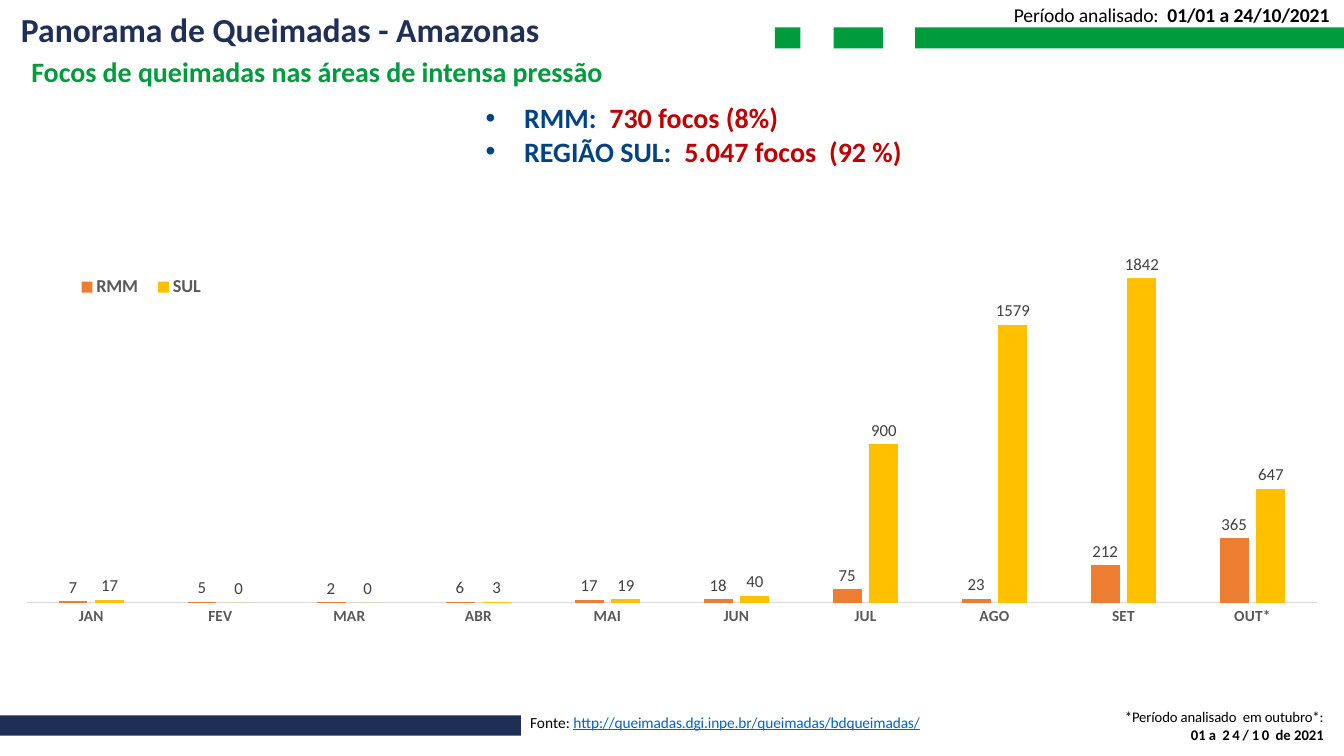
from dataclasses import dataclass

from lxml import etree
from pptx import Presentation
from pptx import util as u
from pptx.chart.data import CategoryChartData
from pptx.dml.color import RGBColor
from pptx.enum import chart as charts
from pptx.enum import shapes, text
from pptx.oxml import ns


@dataclass(frozen=True)
class Theme:
    font: str = "Calibri"
    green: str = "009B3C"
    navy: str = "1F2E57"
    title_navy: str = "202F58"
    blue: str = "004385"
    red: str = "C00000"
    black: str = "000000"
    link: str = "0563C1"
    rmm: str = "ED7D31"
    sul: str = "FFC000"
    axis_text: str = "595959"
    axis_line: str = "D9D9D9"
    label_text: str = "404040"
    title: float = 24
    heading: float = 20
    period: float = 14
    legend: float = 13
    label: float = 12
    axis: float = 11
    source: float = 11
    footnote: float = 10.5


THEME = Theme()
MONTHS = ["JAN", "FEV", "MAR", "ABR", "MAI", "JUN", "JUL", "AGO", "SET", "OUT*"]
HOTSPOTS = {
    "RMM": (THEME.rmm, [7, 5, 2, 6, 17, 18, 75, 23, 212, 365]),
    "SUL": (THEME.sul, [17, 0, 0, 3, 19, 40, 900, 1579, 1842, 647]),
}


def cm_box(*lengths):
    return [u.Cm(length) for length in lengths]


def set_font(font, size, color, **formats):
    values = {"name": THEME.font, "size": u.Pt(size), **formats}
    for name, value in values.items():
        setattr(font, name, value)
    font.color.rgb = RGBColor.from_string(color)


def add_bar(page, color, *box):
    bar = page.shapes.add_shape(shapes.MSO_SHAPE.RECTANGLE, *cm_box(*box))
    bar.shadow.inherit = False
    bar.fill.solid()
    bar.fill.fore_color.rgb = RGBColor.from_string(color)
    bar.line.fill.background()


def add_text_frame(page, box, **formats):
    frame = page.shapes.add_textbox(*cm_box(*box)).text_frame
    values = {"word_wrap": True, "margin_left": 0, "margin_right": 0,
              "margin_top": u.Cm(0.03), "margin_bottom": 0, **formats}
    for name, value in values.items():
        setattr(frame, name, value)
    return frame


def fill_para(para, size, spans, **formats):
    """Add spans of (text, color, bold, letter spacing in points)."""
    for name, value in formats.items():
        setattr(para, name, value)
    for words, color, bold, spacing in spans:
        span = para.add_run()
        span.text = words
        set_font(span.font, size, color, bold=bold)
        span.font.underline = color == THEME.link
        span.font._element.set("spc", str(round(spacing * 100)))


def set_bullet(para):
    props = para._p.get_or_add_pPr()
    props.set("marL", str(u.Cm(12.42)))
    props.set("indent", str(u.Cm(-0.97)))
    etree.SubElement(props, ns.qn("a:buFont"), typeface="Arial")
    etree.SubElement(props, ns.qn("a:buChar"), char="•")


def set_layout(part, following, inner=False, **fractions):
    """Place a chart part, as fractions of the chart, before the tags named."""
    for old in part.findall(ns.qn("c:layout")):
        part.remove(old)
    layout = etree.Element(ns.qn("c:layout"))
    manual = etree.SubElement(layout, ns.qn("c:manualLayout"))
    if inner:
        etree.SubElement(manual, ns.qn("c:layoutTarget"), val="inner")
    for name in ("xMode", "yMode"):
        etree.SubElement(manual, ns.qn(f"c:{name}"), val="edge")
    for name, value in fractions.items():
        etree.SubElement(manual, ns.qn(f"c:{name}"), val=str(value))
    tags = [ns.qn(tag) for tag in following]
    next(child for child in part if child.tag in tags).addprevious(layout)


def add_hotspot_chart(page, *box):
    data = CategoryChartData()
    data.categories = MONTHS
    for name, (_, values) in HOTSPOTS.items():
        data.add_series(name, values)
    chart = page.shapes.add_chart(
        charts.XL_CHART_TYPE.COLUMN_CLUSTERED, *cm_box(*box), data).chart
    set_font(chart.font, 10, THEME.black)
    chart.has_title = False

    plot = chart.plots[0]
    for name, value in {"gap_width": 219, "overlap": -27,
                        "vary_by_categories": False}.items():
        setattr(plot, name, value)
    for series, (color, _) in zip(plot.series, HOTSPOTS.values()):
        series.format.fill.solid()
        series.format.fill.fore_color.rgb = RGBColor.from_string(color)
        labels = series.data_labels
        labels.show_value = True
        labels.position = charts.XL_LABEL_POSITION.OUTSIDE_END
        set_font(labels.font, THEME.label, THEME.label_text, bold=False)

    months = chart.category_axis
    months.major_tick_mark = charts.XL_TICK_MARK.NONE
    months.format.line.color.rgb = RGBColor.from_string(THEME.axis_line)
    months.format.line.width = u.Pt(0.75)
    set_font(months.tick_labels.font, THEME.axis, THEME.axis_text, bold=True)
    for name, value in {"visible": False, "has_major_gridlines": False,
                        "minimum_scale": 0, "maximum_scale": 2000}.items():
        setattr(chart.value_axis, name, value)

    chart.has_legend = True
    chart.legend.position = charts.XL_LEGEND_POSITION.BOTTOM
    chart.legend.include_in_layout = False
    set_font(chart.legend.font, THEME.legend, THEME.axis_text, bold=True)
    set_layout(chart.legend._element, ["c:overlay"], x=0.05, y=0.07, w=0.11, h=0.07)
    set_layout(chart._chartSpace.chart.plotArea, ["c:barChart"], inner=True,
               x=0.02, y=0.02, w=0.96, h=0.82)


def add_heading(page):
    title = add_text_frame(page, (0.28, 0.08, 14.83, 1.27), margin_left=u.Cm(0.25),
                           vertical_anchor=text.MSO_ANCHOR.MIDDLE)
    fill_para(title.paragraphs[0], THEME.title,
              [("Panorama de Queimadas - Amazonas", THEME.title_navy, True, 0)])

    summary = add_text_frame(page, (0.79, 1.02, 22.3, 3.23), margin_top=u.Cm(0.36))
    fill_para(summary.paragraphs[0], THEME.heading,
              [("Focos de queimadas nas áreas de intensa pressão", THEME.green, True, -0.05)],
              space_before=u.Pt(9.8))
    regions = [("RMM:", [("730 focos (8%)", 0)], 8.8),
               ("REGIÃO SUL:", [("5.047 focos", 0), (" ", 4.5), ("(92 %)", 0)], 0)]
    for region, count, gap in regions:
        para = summary.add_paragraph()
        spans = [(region, THEME.blue, True, 0), (" ", THEME.blue, True, 4.5)]
        spans += [(words, THEME.red, True, spacing) for words, spacing in count]
        fill_para(para, THEME.heading, spans, space_before=u.Pt(gap))
        set_bullet(para)

    period = add_text_frame(page, (25.55, 0.05, 8.13, 0.64))
    fill_para(period.paragraphs[0], THEME.period,
              [("Período analisado:", THEME.black, False, -0.1),
               (" ", THEME.black, False, 3),
               ("01/01 a 24/10/2021", THEME.black, True, -0.05)])


def add_footer(page):
    source = add_text_frame(page, (13.36, 17.93, 10.06, 0.53))
    fill_para(source.paragraphs[0], THEME.source,
              [("Fonte: ", THEME.black, False, 0),
               ("http://queimadas.dgi.inpe.br/queimadas/bdqueimadas/",
                THEME.link, False, -0.1)])
    note = add_text_frame(page, (27.31, 17.81, 6.05, 0.94))
    fill_para(note.paragraphs[0], THEME.footnote,
              [("*Período analisado  em outubro*:", THEME.black, False, -0.05)],
              alignment=text.PP_ALIGN.RIGHT)
    fill_para(note.add_paragraph(), THEME.footnote,
              [("01 a", THEME.black, True, 0), (" 24/10", THEME.black, True, 2),
               (" de 2021", THEME.black, True, 0)],
              alignment=text.PP_ALIGN.RIGHT)


def main():
    deck = Presentation()
    deck.slide_width, deck.slide_height = u.Cm(33.87), u.Cm(19.05)
    page = deck.slides.add_slide(deck.slide_layouts[6])
    for left, width in [(23.06, 10.81), (21.01, 1.24), (19.53, 0.64)]:
        add_bar(page, THEME.green, left, 0.69, width, 0.53)
    add_bar(page, THEME.navy, 0, 18.03, 13.13, 0.51)
    add_heading(page)
    add_footer(page)
    add_hotspot_chart(page, 0, 6.1, 33.87, 10.82)
    deck.save("out.pptx")


if __name__ == "__main__":
    main()
